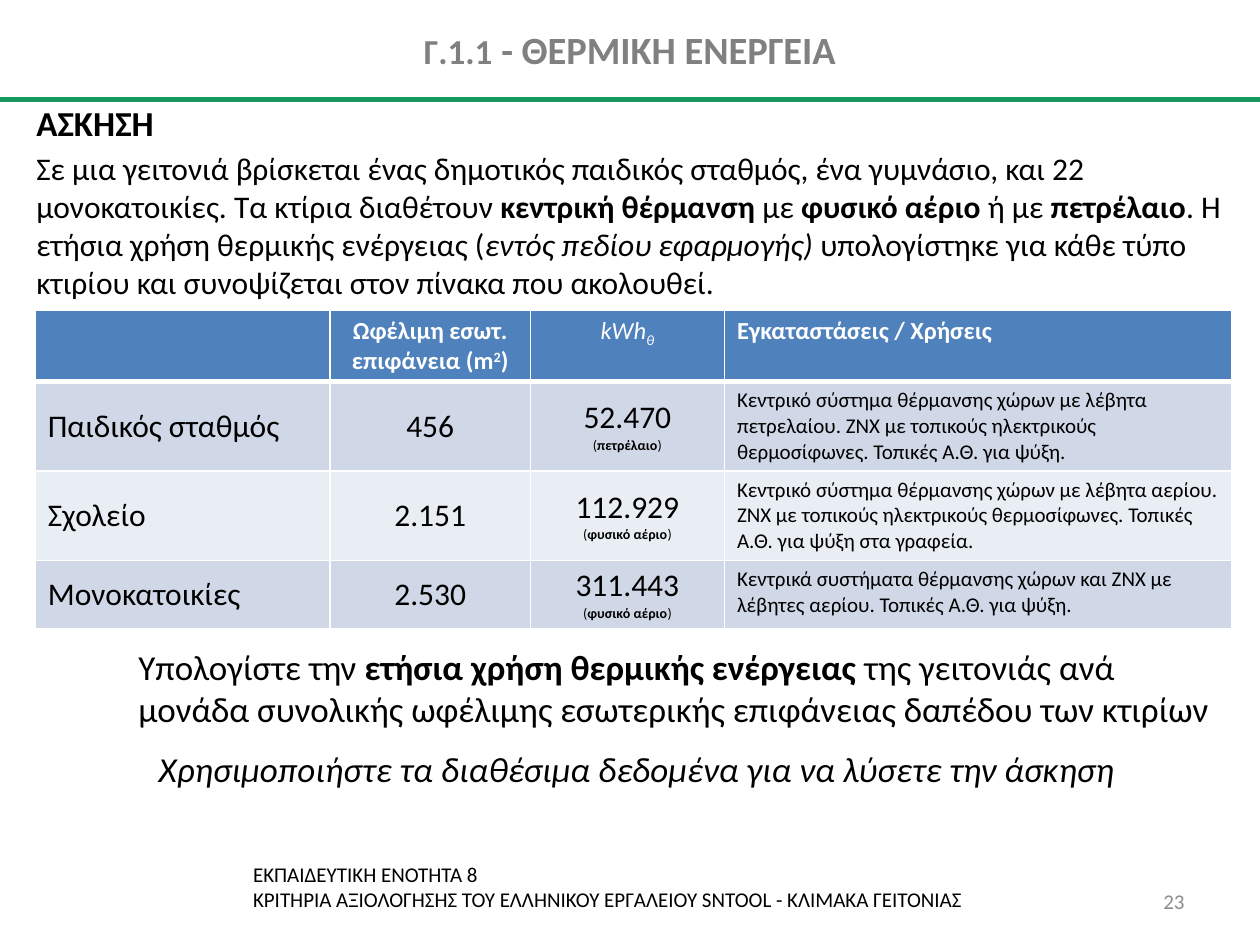
from lxml import etree
from pptx import Presentation
from pptx.dml.color import RGBColor
from pptx.enum.shapes import MSO_CONNECTOR
from pptx.enum.text import MSO_ANCHOR, PP_ALIGN
from pptx.oxml.ns import qn
from pptx.util import Inches, Pt

LEFT, MID, RIGHT = PP_ALIGN.LEFT, PP_ALIGN.CENTER, PP_ALIGN.RIGHT
TOP, CENTRE = MSO_ANCHOR.TOP, MSO_ANCHOR.MIDDLE
STRAIGHT = MSO_CONNECTOR.STRAIGHT
FONT = "Calibri"
COLORS = {
    "black": "000000", "white": "FFFFFF", "title": "808080", "page": "8C8C8C",
    "rule": "159961", "head": "4F81BD", "odd": "D0D8E8", "even": "E9EDF4",
}


def write(frame, paras, size, color="black", align=LEFT):
    """Fill a frame; a run is (text, style, size), style: b, i, ^ (super), _ (sub)."""
    for n, runs in enumerate(paras):
        para = frame.paragraphs[0] if n == 0 else frame.add_paragraph()
        para.alignment = align
        for text, style, *own in runs:
            if text == "\n":
                para.add_line_break()
                continue
            run = para.add_run()
            run.text = text
            font = run.font
            font.name = FONT
            font.size = Pt(own[0] if own else size)
            font.bold = "b" in style
            font.italic = "i" in style
            font.color.rgb = RGBColor.from_string(COLORS[color])
            for mark, shift in (("^", "30000"), ("_", "-25000")):
                if mark in style:
                    run._r.get_or_add_rPr().set("baseline", shift)


def add_text(box, paras, size, color="black", align=LEFT, anchor=TOP):
    frame = slide.shapes.add_textbox(*map(Inches, box)).text_frame
    frame.word_wrap = True
    frame.vertical_anchor = anchor
    write(frame, paras, size, color, align)
    return frame


deck = Presentation()
deck.slide_width, deck.slide_height = Inches(10), Inches(7.5)
slide = deck.slides.add_slide(deck.slide_layouts[6])

# Green rule under the title
rule = slide.shapes.add_connector(
    STRAIGHT, Inches(0), Inches(0.79), Inches(10), Inches(0.79))
rule.line.color.rgb = RGBColor.from_string(COLORS["rule"])
rule.line.width = Pt(3)
etree.SubElement(rule._element.spPr, qn("a:effectLst"))

# Footer and page number
add_text((1.91, 6.79, 6.79, 0.5), [[
    ("ΕΚΠΑΙΔΕΥΤΙΚΗ ΕΝΟΤΗΤΑ 8", ""),
    ("\n", ""),
    ("ΚΡΙΤΗΡΙΑ ΑΞΙΟΛΟΓΗΣΗΣ ΤΟΥ ΕΛΛΗΝΙΚΟΥ ΕΡΓΑΛΕΙΟΥ SNTOOL - ΚΛΙΜΑΚΑ ΓΕΙΤΟΝΙΑΣ", ""),
]], 12)
add_text((8.83, 6.95, 0.67, 0.4), [[("23", "")]], 12, "page", RIGHT, CENTRE)

# Exercise text
intro = add_text((0.19, 0.82, 9.73, 1.6), [
    [("ΑΣΚΗΣΗ", "b", 20)],
    [
        ("Σε μια γειτονιά βρίσκεται ένας δημοτικός παιδικός σταθμός, ένα γυμνάσιο, "
         "και 22 μονοκατοικίες. Τα κτίρια διαθέτουν ", ""),
        ("κεντρική θέρμανση ", "b"),
        ("με", ""),
        (" φυσικό αέριο ", "b"),
        ("ή με ", ""),
        ("πετρέλαιο", "b"),
        (". Η ετήσια χρήση θερμικής ενέργειας (", ""),
        ("εντός πεδίου εφαρμογής) ", "i"),
        ("υπολογίστηκε για κάθε τύπο κτιρίου και συνοψίζεται στον πίνακα "
         "που ακολουθεί.", ""),
    ],
], 18)
intro.paragraphs[0].line_spacing = 0.8
intro.paragraphs[1].space_before = Pt(3.6)

# Table of buildings
heads = [
    [],
    [("Ωφέλιμη εσωτ. επιφάνεια (m", "b"), ("2", "b^"), (")", "b")],
    [("kWh", "i"), ("θ", "i_")],
    [("Εγκαταστάσεις / Χρήσεις", "b")],
]
rows = [
    ("Παιδικός σταθμός", "456", "52.470", "πετρέλαιο",
     "Κεντρικό σύστημα θέρμανσης χώρων με λέβητα πετρελαίου. ΖΝΧ με τοπικούς "
     "ηλεκτρικούς θερμοσίφωνες. Τοπικές Α.Θ. για ψύξη."),
    ("Σχολείο", "2.151", "112.929", "φυσικό αέριο",
     "Κεντρικό σύστημα θέρμανσης χώρων με λέβητα αερίου. ΖΝΧ με τοπικούς "
     "ηλεκτρικούς θερμοσίφωνες. Τοπικές Α.Θ. για ψύξη στα γραφεία."),
    ("Μονοκατοικίες", "2.530", "311.443", "φυσικό αέριο",
     "Κεντρικά συστήματα θέρμανσης χώρων και ΖΝΧ με λέβητες αερίου. "
     "Τοπικές Α.Θ. για ψύξη."),
]
widths = [2.34, 1.59, 1.54, 4.03]
heights = [0.57, 0.71, 0.71, 0.54]
aligns = [LEFT, MID, MID, LEFT]

table = slide.shapes.add_table(
    len(heights), len(widths), Inches(0.28), Inches(2.46),
    Inches(sum(widths)), Inches(sum(heights))).table
for col, width in zip(table.columns, widths):
    col.width = Inches(width)
for row, height in zip(table.rows, heights):
    row.height = Inches(height)

for c, runs in enumerate(heads):
    write(table.cell(0, c).text_frame, [runs], 14, "white", aligns[c])
for r, (name, area, energy, fuel, note) in enumerate(rows, 1):
    cells = [
        [[(name, "")]],
        [[(area, "")]],
        [[(energy, "")], [("(", "", 8), (fuel, "b", 8), (")", "", 8)]],
        [[(note, "", 12)]],
    ]
    for c, paras in enumerate(cells):
        cell = table.cell(r, c)
        cell.vertical_anchor = TOP if c == 3 else CENTRE
        write(cell.text_frame, paras, 18, "black", aligns[c])

for r in range(len(heights)):
    fill = "head" if r == 0 else "odd" if r % 2 else "even"
    for c in range(len(widths)):
        cell = table.cell(r, c)
        props = cell._tc.get_or_add_tcPr()
        for side in "LRTB":
            thick = (r, side) in ((0, "B"), (1, "T"))
            edge = etree.SubElement(
                props, qn(f"a:ln{side}"), w=str(Pt(3 if thick else 1)))
            paint = etree.SubElement(edge, qn("a:solidFill"))
            etree.SubElement(paint, qn("a:srgbClr"), val=COLORS["white"])
        cell.fill.solid()
        cell.fill.fore_color.rgb = RGBColor.from_string(COLORS[fill])

# Title
add_text((0, 0, 10, 0.78), [[
    ("Γ.1.1", "b", 20), (" - ΘΕΡΜΙΚΗ ΕΝΕΡΓΕΙΑ", "b"),
]], 22, "title", MID, CENTRE)

# Task and hint
add_text((1, 5.07, 8.78, 0.78), [[
    ("Υπολογίστε την ", ""),
    ("ετήσια χρήση θερμικής ενέργειας ", "b"),
    ("της γειτονιάς ανά μονάδα συνολικής ωφέλιμης εσωτερικής επιφάνειας "
     "δαπέδου των κτιρίων", ""),
]], 20)
add_text((0.19, 5.88, 9.73, 0.45), [[
    ("Χρησιμοποιήστε τα διαθέσιμα δεδομένα για να λύσετε την άσκηση", "i"),
]], 20, align=MID)

deck.save("out.pptx")
